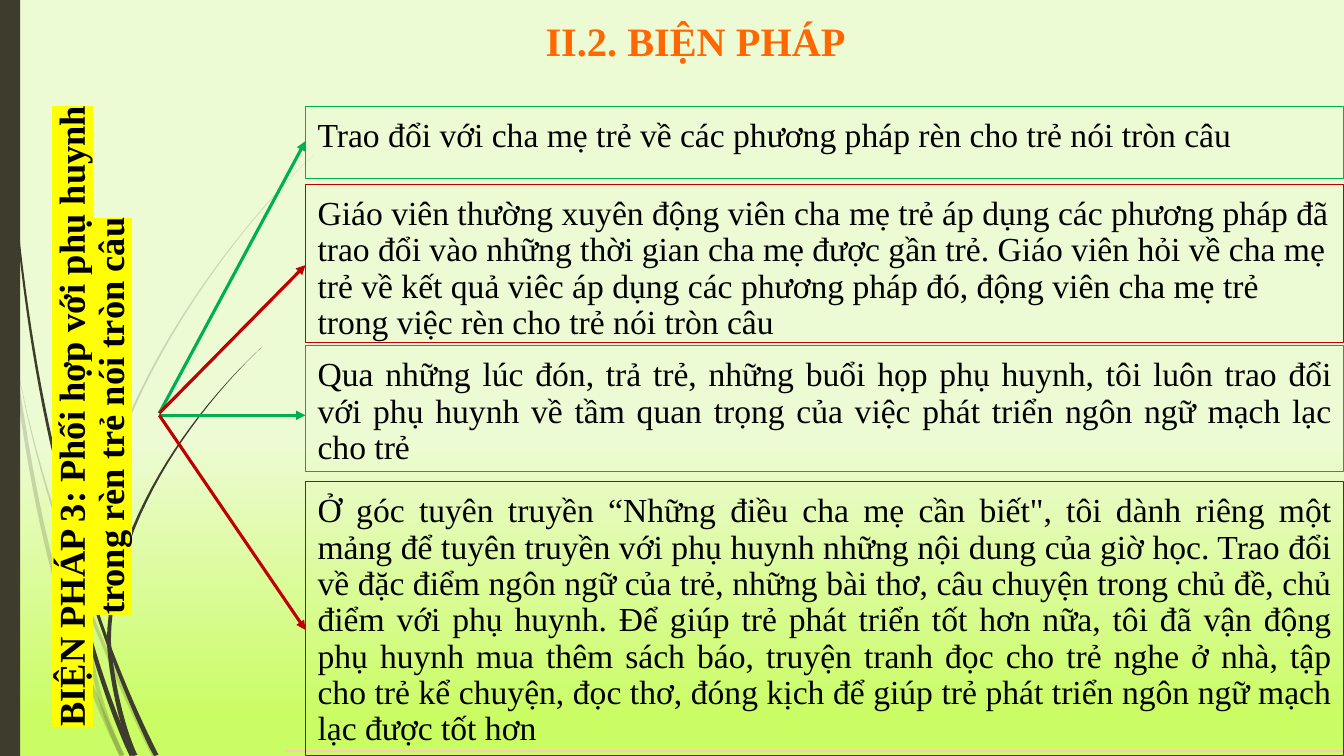
import math
from dataclasses import dataclass

import lxml.etree
import pptx
import pptx.dml.color
import pptx.enum.shapes
import pptx.enum.text
import pptx.oxml.ns
import pptx.util

Inches = pptx.util.Inches
Pt = pptx.util.Pt
RGBColor = pptx.dml.color.RGBColor
Align = pptx.enum.text.PP_ALIGN
Anchor = pptx.enum.text.MSO_ANCHOR
qn = pptx.oxml.ns.qn

BARK = RGBColor(0x3E, 0x3D, 0x2D)
PALE_LIME = RGBColor(0xED, 0xFB, 0xD4)
LIME = RGBColor(0xCA, 0xFC, 0x64)
ORANGE = RGBColor(0xFF, 0x67, 0x00)
BLACK = RGBColor(0, 0, 0)
GREEN = RGBColor(0x00, 0xB0, 0x50)
RED = RGBColor(0xC0, 0x00, 0x00)
PINK = RGBColor(0xFF, 0xC7, 0xBD)
YELLOW = RGBColor(0xFF, 0xFF, 0x00)
FONT = "Times New Roman"

SLIDE_WIDTH, SLIDE_HEIGHT = 13.33, 7.5
BOX_LEFT, BOX_WIDTH = 3.03, 10.3
HUB_X = 1.58
PADDING = 0.12
CURVE_STEPS = 24

Point = tuple[float, float]


@dataclass
class Blade:
    """A grass blade: a cubic curve from start to end whose width changes evenly."""
    start: Point
    start_pull: Point
    end_pull: Point
    end: Point
    start_width: float
    end_width: float
    opacity: int = 100

    def edges_at(self, t: float) -> tuple[Point, Point]:
        """Return the two edge points at t, from 0 at the start to 1 at the end."""
        u = 1 - t
        controls = (self.start, self.start_pull, self.end_pull, self.end)
        weights = (u ** 3, 3 * u * u * t, 3 * u * t * t, t ** 3)
        slopes = (-u * u, u * u - 2 * u * t, 2 * u * t - t * t, t * t)
        x, y = (sum(w * p[axis] for w, p in zip(weights, controls)) for axis in (0, 1))
        dx, dy = (sum(s * p[axis] for s, p in zip(slopes, controls)) for axis in (0, 1))
        half = (u * self.start_width + t * self.end_width) / 2 / math.hypot(dx, dy)
        return (x - dy * half, y + dx * half), (x + dy * half, y - dx * half)

    def outline(self) -> list[Point]:
        """Go down one edge and back up the other, staying on the slide."""
        edges = [self.edges_at(step / CURVE_STEPS) for step in range(CURVE_STEPS + 1)]
        loop = [left for left, _ in edges] + [right for _, right in reversed(edges)]
        return [(max(x, 0), min(max(y, 0), SLIDE_HEIGHT)) for x, y in loop]


FAINT = 20
FAINT_KNEE: Point = (0.86, 5.9)
DARK_FORK: Point = (0.59, 4.72)
DARK_KNEE: Point = (1.08, 6.36)

GRASS = [
    Blade((0, 2.85), (0.3, 4.3), (0.3, 5.6), (1.21, 7.5), 0.03, 0.05, FAINT),
    Blade((0.14, 3.45), (0.38, 4.9), (0.9, 6.2), (1.53, 7.5), 0, 0.05, FAINT),
    Blade((3.12, 1.53), (2.3, 2.3), (0.9, 4.1), FAINT_KNEE, 0, 0.03, FAINT),
    Blade(FAINT_KNEE, (0.86, 6.5), (0.98, 7), (1.21, 7.5), 0.03, 0.05, FAINT),
    Blade((0.04, 0), (0.06, 1.6), (0.25, 3.4), DARK_FORK, 0.01, 0.03),
    Blade(DARK_FORK, (0.68, 5.7), (0.95, 6.7), (1.31, 7.5), 0.03, 0.05),
    Blade((0.7, 1.41), (0.53, 2.5), (0.5, 3.7), DARK_FORK, 0, 0.03),
    Blade(DARK_FORK, (0.8, 5.7), (1.15, 6.7), (1.55, 7.5), 0.01, 0.05),
    Blade((2.6, 3.44), (1.9, 4.1), (1.1, 5.2), DARK_KNEE, 0, 0.04),
    Blade(DARK_KNEE, (1.1, 6.7), (1.2, 7.2), (1.34, 7.5), 0.04, 0.05),
]


@dataclass
class Measure:
    """A boxed measure and the arrow that reaches it from the hub."""
    text: str
    top: float
    height: float
    color: RGBColor
    hub_y: float
    arrow_y: float
    align: Align = Align.JUSTIFY


MEASURES = [
    Measure("Trao đổi với cha mẹ trẻ về các phương pháp rèn cho trẻ nói tròn câu",
            1.06, 0.71, GREEN, 4.1, 1.4),
    Measure("Giáo viên thường xuyên động viên cha mẹ trẻ áp dụng các phương pháp đã trao đổi vào "
            "những thời gian cha mẹ được gần trẻ. Giáo viên hỏi về cha mẹ trẻ về kết quả viêc áp "
            "dụng các phương pháp đó, động viên cha mẹ trẻ trong việc rèn cho trẻ nói tròn câu",
            1.83, 1.57, RED, 4.1, 2.63, Align.LEFT),
    Measure("Qua những lúc đón, trả trẻ, những buổi họp phụ huynh, tôi luôn trao đổi với phụ huynh "
            "về tầm quan trọng của việc phát triển ngôn ngữ mạch lạc cho trẻ",
            3.43, 1.25, GREEN, 4.12, 4.12),
    Measure("Ở góc tuyên truyền “Những điều cha mẹ cần biết\", tôi dành riêng một mảng để tuyên "
            "truyền với phụ huynh những nội dung của giờ học. Trao đổi về đặc điểm ngôn ngữ của "
            "trẻ, những bài thơ, câu chuyện trong chủ đề, chủ điểm với phụ huynh. Để giúp trẻ "
            "phát triển tốt hơn nữa, tôi đã vận động phụ huynh mua thêm sách báo, truyện tranh "
            "đọc cho trẻ nghe ở nhà, tập cho trẻ kể chuyện, đọc thơ, đóng kịch để giúp trẻ phát "
            "triển ngôn ngữ mạch lạc được tốt hơn",
            4.78, 2.72, RED, 4.12, 6.25),
]


def paint_background(slide) -> None:
    fill = slide.background.fill
    fill.gradient()
    fill.gradient_angle = 270
    for stop, color, position in zip(fill.gradient_stops, (PALE_LIME, LIME), (0.58, 0.95)):
        stop.color.rgb = color
        stop.position = position


def fill_plain(shape, color: RGBColor) -> None:
    """Give a shape a solid fill with neither outline nor shadow."""
    shape.shadow.inherit = False
    shape.fill.solid()
    shape.fill.fore_color.rgb = color
    shape.line.fill.background()


def draw_blade(slide, blade: Blade) -> None:
    first, *rest = [(Inches(x), Inches(y)) for x, y in blade.outline()]
    builder = slide.shapes.build_freeform(*first)
    builder.add_line_segments(rest, close=True)
    shape = builder.convert_to_shape()
    fill_plain(shape, BARK)
    if blade.opacity < 100:
        color = shape.element.spPr.find(".//" + qn("a:srgbClr"))
        lxml.etree.SubElement(color, qn("a:alpha"), val=str(blade.opacity * 1000))


def add_rectangle(slide, left: float, top: float, width: float, height: float):
    return slide.shapes.add_shape(pptx.enum.shapes.MSO_SHAPE.RECTANGLE,
                                  *map(Inches, (left, top, width, height)))


def write(shape, text: str, size: float, color: RGBColor, align: Align,
          anchor: Anchor = Anchor.TOP, bold: bool = False, spacing: float = 0.9) -> None:
    """Fill a shape with one paragraph."""
    frame = shape.text_frame
    frame.word_wrap = True
    frame.vertical_anchor = anchor
    frame.margin_left = frame.margin_right = Inches(PADDING)
    frame.margin_top = frame.margin_bottom = Inches(PADDING)
    paragraph = frame.paragraphs[0]
    paragraph.alignment = align
    paragraph.line_spacing = spacing
    run = paragraph.add_run()
    run.text = text
    run.font.size = Pt(size)
    run.font.bold = bold
    run.font.color.rgb = color
    run.font.name = FONT


def draw_line(slide, start: Point, end: Point, color: RGBColor, width: float,
              arrow: bool = False) -> None:
    line = slide.shapes.add_connector(pptx.enum.shapes.MSO_CONNECTOR.STRAIGHT,
                                      *map(Inches, start + end))
    line.line.color.rgb = color
    line.line.width = Pt(width)
    properties = line.element.spPr
    if arrow:
        lxml.etree.SubElement(properties.find(qn("a:ln")), qn("a:tailEnd"), type="triangle")
    lxml.etree.SubElement(properties, qn("a:effectLst"))


def draw_title(slide) -> None:
    title = slide.shapes.add_textbox(*map(Inches, (0.47, 0, 12.86, 0.81)))
    write(title, "II.2. BIỆN PHÁP", 28.8, ORANGE, Align.CENTER, Anchor.MIDDLE, True, 1.0)


def draw_sidebar(slide) -> None:
    """Draw the highlighted heading that reads upwards."""
    sidebar = slide.shapes.add_textbox(*map(Inches, (0.41, 0.81, 1.18, 6.64)))
    write(sidebar, "BIỆN PHÁP 3: Phối hợp với phụ huynh trong rèn trẻ nói tròn câu",
          26, BLACK, Align.CENTER, bold=True)
    body = sidebar.element.txBody
    body.find(qn("a:bodyPr")).set("vert", "vert270")
    highlight = lxml.etree.Element(qn("a:highlight"))
    lxml.etree.SubElement(highlight, qn("a:srgbClr"), val=str(YELLOW))
    body.find(".//" + qn("a:solidFill")).addnext(highlight)


def draw_measure(slide, measure: Measure) -> None:
    box = add_rectangle(slide, BOX_LEFT, measure.top, BOX_WIDTH, measure.height)
    box.shadow.inherit = False
    box.fill.background()
    box.line.color.rgb = measure.color
    box.line.width = Pt(0.75)
    write(box, measure.text, 24, BLACK, measure.align)
    draw_line(slide, (HUB_X, measure.hub_y), (BOX_LEFT, measure.arrow_y),
              measure.color, 2.25, arrow=True)


def main() -> None:
    deck = pptx.Presentation()
    deck.slide_width, deck.slide_height = Inches(SLIDE_WIDTH), Inches(SLIDE_HEIGHT)
    slide = deck.slides.add_slide(deck.slide_layouts[6])
    paint_background(slide)
    for blade in GRASS:
        draw_blade(slide, blade)
    fill_plain(add_rectangle(slide, 0, 0, 0.2, SLIDE_HEIGHT), BARK)
    draw_title(slide)
    draw_sidebar(slide)
    draw_line(slide, (2.83, 7.45), (SLIDE_WIDTH, 7.45), PINK, 1)
    for measure in MEASURES:
        draw_measure(slide, measure)
    deck.save("out.pptx")


if __name__ == "__main__":
    main()
